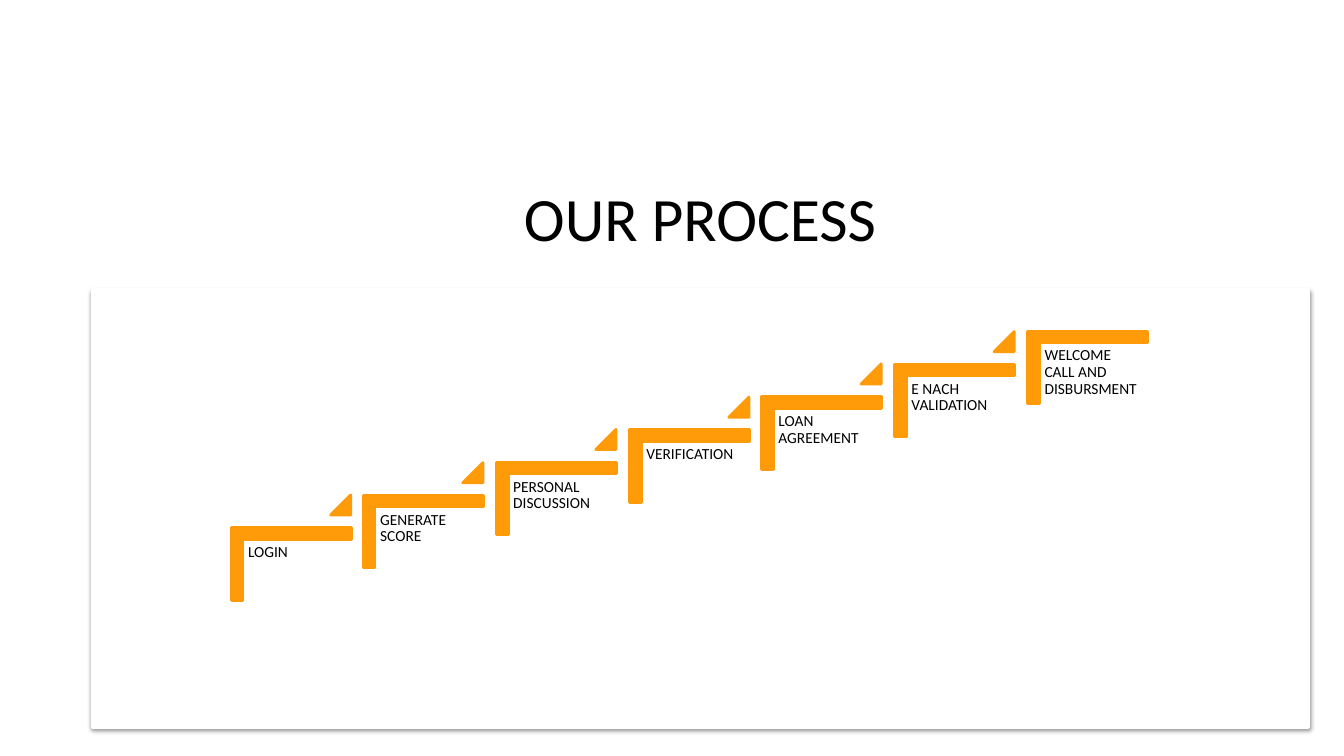
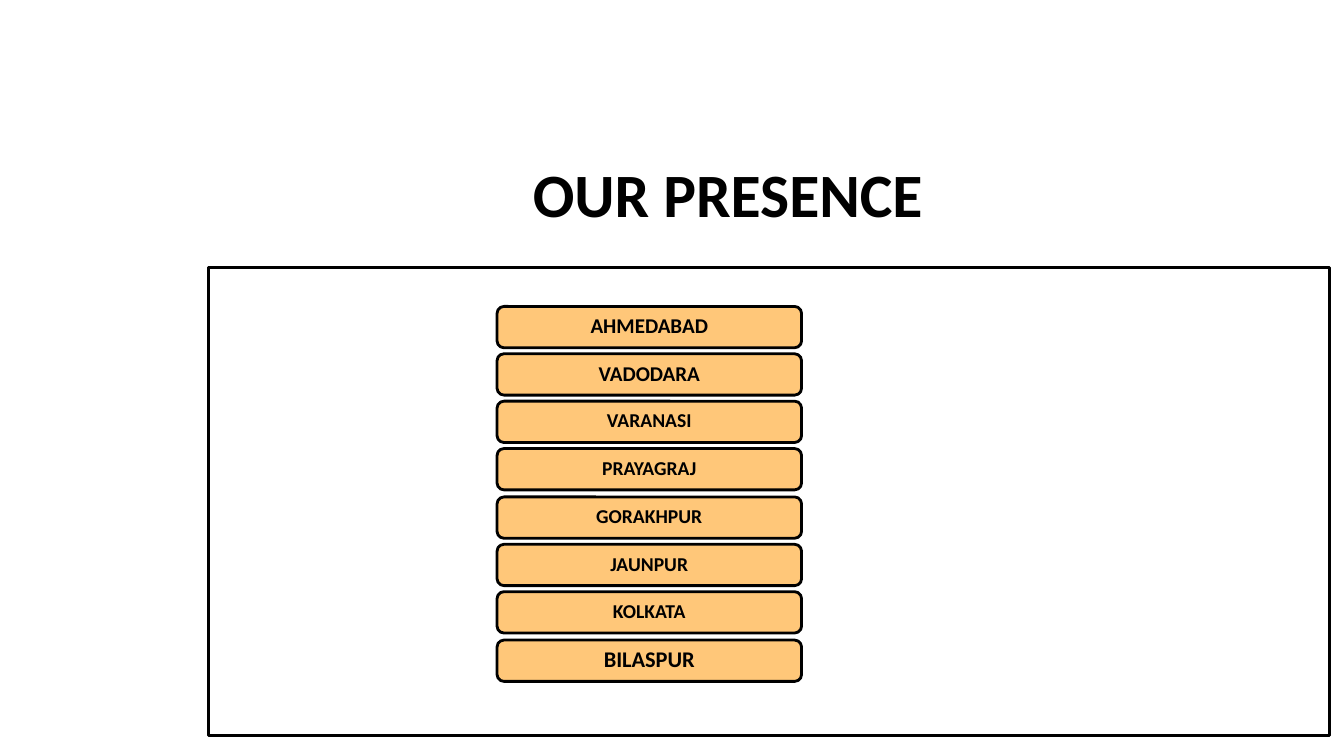
from lxml.etree import SubElement
from pptx import Presentation
from pptx.dml.color import RGBColor
from pptx.enum.shapes import MSO_SHAPE as Shape
from pptx.enum.text import MSO_ANCHOR as Anchor, PP_ALIGN as Align
from pptx.oxml.ns import qn
from pptx.util import Pt

PX = 9144
FONT = "Calibri"
COLORS = {"paper": "FFFFFF", "ink": "000000", "step": "FF9A08", "city": "FFC26B"}
STEPS = ["LOGIN", "GENERATE SCORE", "PERSONAL DISCUSSION", "VERIFICATION",
         "LOAN AGREEMENT", "E NACH VALIDATION", "WELCOME CALL AND DISBURSMENT"]
CITIES = [("AHMEDABAD", 15), ("VADODARA", 15), ("VARANASI", 14), ("PRAYAGRAJ", 14),
          ("GORAKHPUR", 14), ("JAUNPUR", 14), ("KOLKATA", 14), ("BILASPUR", 16)]


def color(key):
    return RGBColor.from_string(COLORS[key])


def emu(*lengths):
    return [length * PX for length in lengths]


def fill_shape(shape, key, opacity=100):
    shape.fill.solid()
    shape.fill.fore_color.rgb = color(key)
    if opacity < 100:
        tint = shape.element.spPr.find(qn("a:solidFill")).find(qn("a:srgbClr"))
        SubElement(tint, qn("a:alpha"), val=str(opacity * 1000))


def add_box(slide, kind, box, fill, line, line_width=2, opacity=100):
    shape = slide.shapes.add_shape(kind, *emu(*box))
    shape.shadow.inherit = False
    fill_shape(shape, fill, opacity)
    shape.line.color.rgb = color(line)
    shape.line.width = Pt(line_width)
    return shape


def add_soft_shadow(shape):
    effects = shape.element.spPr.find(qn("a:effectLst"))
    shadow = SubElement(effects, qn("a:outerShdw"), blurRad=str(Pt(3.1)),
                        dist=str(Pt(1.6)), dir="5400000", rotWithShape="0")
    tint = SubElement(shadow, qn("a:srgbClr"), val=COLORS["ink"])
    SubElement(tint, qn("a:alpha"), val="38000")


def write(shape, text, size, bold=False, align=Align.LEFT, anchor=Anchor.TOP,
          inset=None, spacing=None):
    frame = shape.text_frame
    frame.text = text
    frame.word_wrap = True
    frame.vertical_anchor = anchor
    if inset is not None:
        frame.margin_left = frame.margin_right = inset * PX
        frame.margin_top = frame.margin_bottom = inset * PX
    paragraph = frame.paragraphs[0]
    paragraph.alignment = align
    paragraph.line_spacing = spacing
    font = paragraph.runs[0].font
    font.name, font.size, font.bold = FONT, Pt(size), bold
    font.color.rgb = color("ink")


def add_titled_slide(deck, text, box, bold=False):
    slide = deck.slides.add_slide(deck.slide_layouts[5])
    title = slide.shapes.title
    title.left, title.top, title.width, title.height = emu(*box)
    fill_shape(title, "paper", 80)
    write(title, text, 44, bold, Align.CENTER, Anchor.MIDDLE)
    return slide


def add_step(slide, text, left, top, has_next):
    corner = add_box(slide, Shape.CORNER, (left, top, 72, 119), "step", "step")
    corner.rotation = 90
    corner.adjustments[0] = corner.adjustments[1] = 0.16
    label = slide.shapes.add_textbox(*emu(left - 12, top + 35, 108, 94))
    write(label, text, 11, inset=5, spacing=0.9)
    if has_next:
        marker = add_box(slide, Shape.ISOSCELES_TRIANGLE,
                         (left + 75, top - 9, 20, 20), "step", "step")
        marker.adjustments[0] = 1


def build_process(deck):
    slide = add_titled_slide(deck, "OUR PROCESS", (92, 162, 1205, 106))
    card = add_box(slide, Shape.RECTANGLE, (92, 288, 1205, 433), "paper", "paper", 3)
    add_soft_shadow(card)
    last = len(STEPS) - 1
    for index, text in enumerate(STEPS):
        left = 253 + 790 * index // last
        top = 500 - 195 * index // last
        add_step(slide, text, left, top, index < last)


def build_presence(deck):
    slide = add_titled_slide(deck, "OUR PRESENCE", (211, 133, 1022, 116), True)
    add_box(slide, Shape.FLOWCHART_PROCESS, (207, 265, 1112, 465), "paper", "ink")
    last = len(CITIES) - 1
    for index, (city, size) in enumerate(CITIES):
        top = 304 + 331 * index // last
        pill = add_box(slide, Shape.ROUNDED_RECTANGLE, (493, top, 302, 41),
                       "city", "ink", opacity=90)
        anchor = Anchor.TOP if city == "VARANASI" else Anchor.MIDDLE
        write(pill, city, size, True, Align.CENTER, anchor, 7, 0.9)


def main():
    deck = Presentation()
    deck.slide_width, deck.slide_height = emu(1333, 750)
    build_process(deck)
    build_presence(deck)
    deck.save("out.pptx")


if __name__ == "__main__":
    main()
